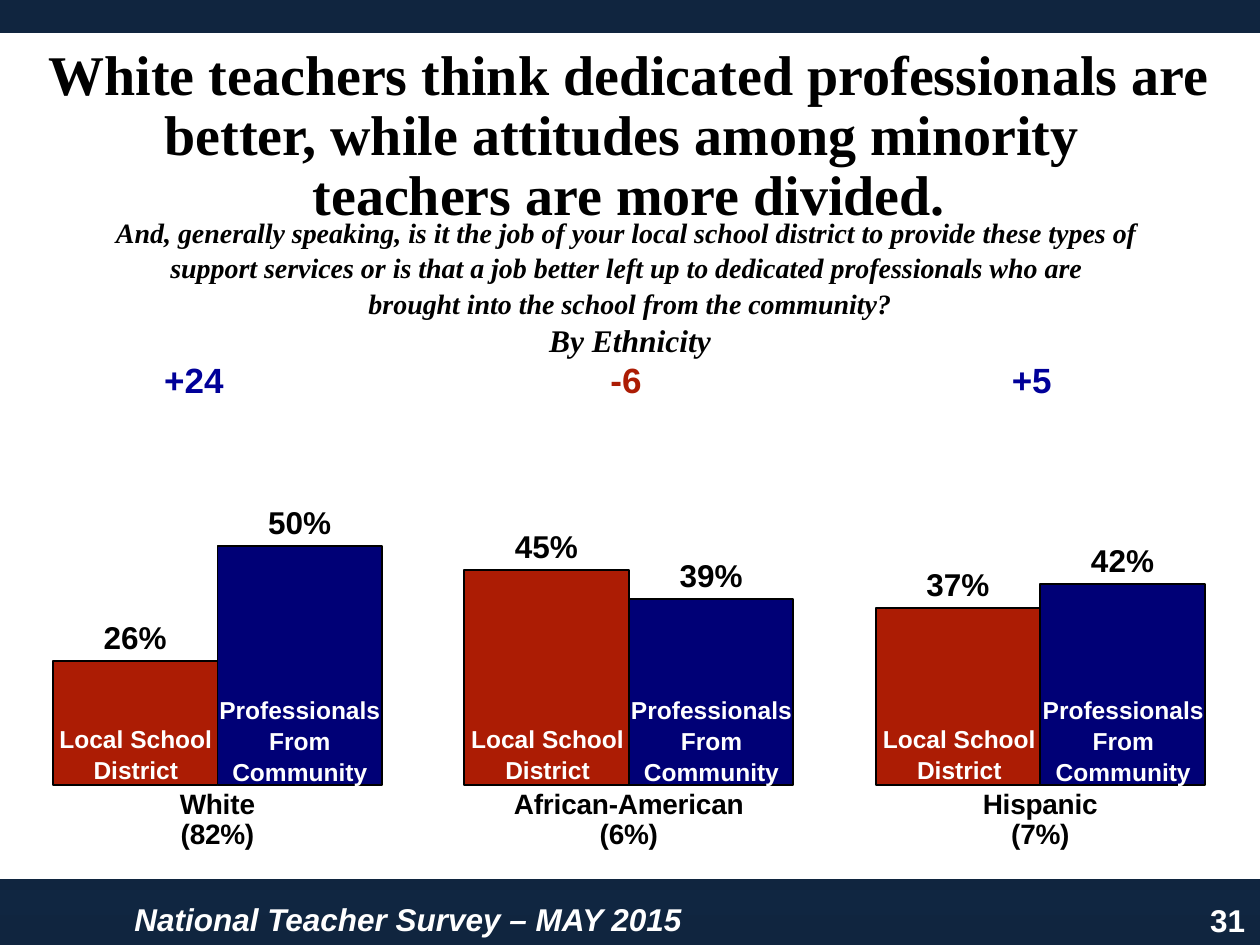
"""Build the survey slide comparing teacher attitudes by ethnicity."""
import copy

import lxml.etree
import pptx
import pptx.chart.data
import pptx.dml.color
import pptx.enum.chart
import pptx.enum.shapes
import pptx.enum.text
import pptx.oxml.ns
import pptx.util

Cm = pptx.util.Cm
Pt = pptx.util.Pt
ALIGN = pptx.enum.text.PP_ALIGN
NAVY, RED, BLUE = "10253F", "AC1C04", "000099"


def color(value):
    """Turn a hex string into a colour."""
    return pptx.dml.color.RGBColor.from_string(value)


def add_text(page, place, lines, size, ink, face="Arial", italic=False,
             align=ALIGN.CENTER, spacing=1.05):
    """Add a bold text box with one paragraph for each line."""
    box = page.shapes.add_textbox(*[Cm(length) for length in place])
    frame = box.text_frame
    frame.word_wrap = True
    frame.auto_size = pptx.enum.text.MSO_AUTO_SIZE.SHAPE_TO_FIT_TEXT
    for index, line in enumerate(lines):
        para = frame.add_paragraph() if index else frame.paragraphs[0]
        para.alignment = align
        para.line_spacing = spacing
        span = para.add_run()
        span.text = line
        looks = {"name": face, "size": Pt(size), "bold": True, "italic": italic}
        for key, value in looks.items():
            setattr(span.font, key, value)
        span.font.color.rgb = color(ink)


deck = pptx.Presentation()
deck.slide_width, deck.slide_height = Cm(25.4), Cm(19.05)
page = deck.slides.add_slide(deck.slide_layouts[6])

backdrop = page.background.fill
backdrop.gradient()
backdrop.gradient_angle = 270
first_stop = page.background._cSld.find(".//" + pptx.oxml.ns.qn("a:gs"))
first_stop.addnext(copy.deepcopy(first_stop))
for stop, (position, shade) in zip(
        backdrop.gradient_stops, [(0, NAVY), (0.5, "17375E"), (1, NAVY)]):
    stop.position = position
    stop.color.rgb = color(shade)

panel = page.shapes.add_shape(
    pptx.enum.shapes.MSO_SHAPE.RECTANGLE, Cm(-0.25), Cm(0.56), Cm(25.88), Cm(17.27))
panel.shadow.inherit = False
panel.fill.solid()
panel.fill.fore_color.rgb = color("FFFFFF")
panel.line.color.rgb = color(NAVY)
panel.line.width = Pt(6)

add_text(page, (22.81, 18.01, 2.54, 1.02), ["31"], 18, "FFFFFF", align=ALIGN.RIGHT)
add_text(page, (2.46, 17.98, 19.84, 1.02), ["National Teacher Survey – MAY 2015"],
         18, "FFFFFF", italic=True, align=ALIGN.LEFT)

chart_data = pptx.chart.data.CategoryChartData(number_format="0%")
chart_data.categories = ["White\n(82%)", "African-American\n(6%)", "Hispanic\n(7%)"]
chart_data.add_series("Series 1", [0.26, 0.45, 0.37])
chart_data.add_series("Series 2", [0.5, 0.39, 0.42])
chart = page.shapes.add_chart(
    pptx.enum.chart.XL_CHART_TYPE.COLUMN_CLUSTERED,
    Cm(-0.15), Cm(-0.51), Cm(25.68), Cm(18.54), chart_data).chart
chart.has_legend = False
chart.has_title = False
chart.font.name = "Arial"
chart.font.size = Pt(18)
chart.font.color.rgb = color("000000")

categories, values = chart.category_axis, chart.value_axis
for axis in (categories, values):
    for key, value in {
            "major_tick_mark": pptx.enum.chart.XL_TICK_MARK.NONE,
            "minor_tick_mark": pptx.enum.chart.XL_TICK_MARK.NONE,
            "has_major_gridlines": False}.items():
        setattr(axis, key, value)
    axis.format.line.fill.background()
for key, value in {"name": "Arial", "size": Pt(16), "bold": True}.items():
    setattr(categories.tick_labels.font, key, value)
for key, value in {
        "minimum_scale": 0, "maximum_scale": 1.05, "major_unit": 0.1,
        "tick_label_position": pptx.enum.chart.XL_TICK_LABEL_POSITION.NONE}.items():
    setattr(values, key, value)

plot = chart.plots[0]
for key, value in {"gap_width": 50, "overlap": 0, "vary_by_categories": False}.items():
    setattr(plot, key, value)
for series, shade in zip(plot.series, [RED, "000076"]):
    series.format.fill.solid()
    series.format.fill.fore_color.rgb = color(shade)
    series.format.line.color.rgb = color("000000")
    series.format.line.width = Pt(1)
    labels = series.data_labels
    for key, value in {
            "show_value": True, "number_format": "0%", "number_format_is_linked": False,
            "position": pptx.enum.chart.XL_LABEL_POSITION.OUTSIDE_END}.items():
        setattr(labels, key, value)
    for key, value in {"name": "Arial", "size": Pt(18), "bold": True}.items():
        setattr(labels.font, key, value)

plot_area = chart._chartSpace.chart.plotArea
for old_layout in plot_area.findall(pptx.oxml.ns.qn("c:layout")):
    plot_area.remove(old_layout)
layout = lxml.etree.Element(pptx.oxml.ns.qn("c:layout"))
manual = lxml.etree.SubElement(layout, pptx.oxml.ns.qn("c:manualLayout"))
for tag, value in [("layoutTarget", "inner"), ("xMode", "edge"), ("yMode", "edge"),
                   ("x", "0.015"), ("y", "0.336"), ("w", "0.969"), ("h", "0.545")]:
    lxml.etree.SubElement(manual, pptx.oxml.ns.qn("c:" + tag)).set("val", value)
plot_area.insert(0, layout)

add_text(page, (-0.28, 0.84, 25.93, 3.73),
         ["White teachers think dedicated professionals are better, "
          "while attitudes among minority ", "teachers are more divided."],
         32, "000000", "Times New Roman", spacing=0.89)
add_text(page, (0, 4.19, 25.4, 2.39),
         ["And, generally speaking, is it the job of your local school district "
          "to provide these types of ",
          "support services or is that a job better left up to dedicated "
          "professionals who are ",
          "brought into the school from the community?"],
         16, "000000", "Times New Roman", italic=True)
add_text(page, (-0.28, 6.3, 25.96, 1.02), ["By Ethnicity"],
         18, "000000", "Times New Roman", italic=True)

for group, (margin, left, ink) in enumerate(
        [("+24", 2.21, BLUE), ("-6", 10.92, RED), ("+5", 19.1, BLUE)]):
    add_text(page, (left, 7.06, 3.4, 1.12), [margin], 20, ink)
    shift = 8.3 * group
    add_text(page, (0.76 + shift, 14.44, 3.96, 1.45), ["Local School District"],
             14, "FFFFFF")
    add_text(page, (3.91 + shift, 13.86, 4.27, 2.06),
             ["Professionals From", "Community"], 14, "FFFFFF")

deck.save("out.pptx")
